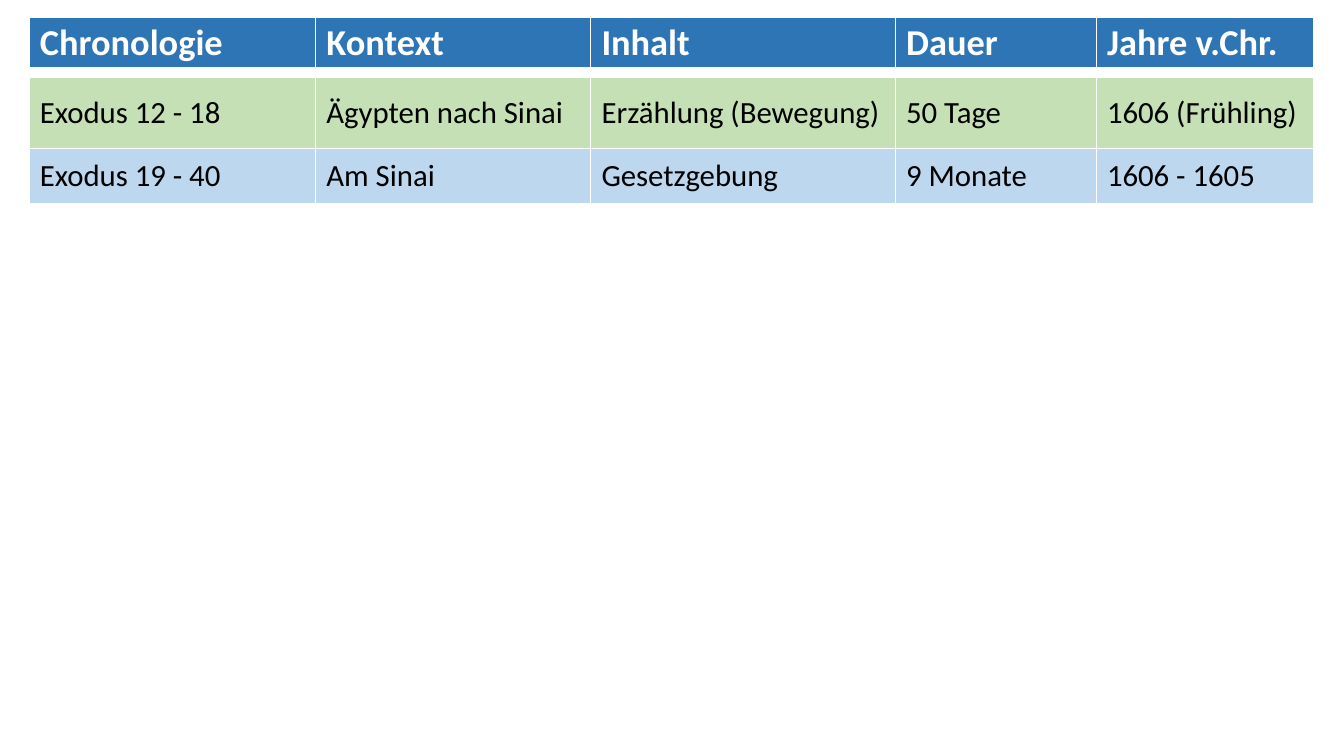
"""Build the slide with the chronology table of Exodus."""
from dataclasses import dataclass

from lxml import etree
from pptx import Presentation
from pptx.dml.color import RGBColor
from pptx.enum.text import MSO_ANCHOR, PP_ALIGN
from pptx.oxml.ns import qn
from pptx.slide import Slide
from pptx.table import _Cell
from pptx.util import Pt

MIDDLE = MSO_ANCHOR.MIDDLE
LEFT, JUSTIFY = PP_ALIGN.LEFT, PP_ALIGN.JUSTIFY

WHITE = RGBColor(0xFF, 0xFF, 0xFF)
BLACK = RGBColor(0x00, 0x00, 0x00)
BLUE = RGBColor(0x2E, 0x75, 0xB6)
GREEN = RGBColor(0xC5, 0xE0, 0xB4)
PALE_BLUE = RGBColor(0xBD, 0xD7, 0xEE)

FONT = "Calibri"
TABLE_LEFT, TABLE_TOP = 20.8, 12.4
COLUMN_WIDTHS = (204.7, 196.5, 217.6, 143.5, 155.3)
SIDE_MARGIN = 7.7


@dataclass(frozen=True)
class TableRow:
    """One table row with its look."""

    height: float
    fill: RGBColor
    texts: tuple[str, ...] = ("",) * len(COLUMN_WIDTHS)
    size: int = 22
    color: RGBColor = BLACK
    bold: bool = False
    align: PP_ALIGN = LEFT
    top_line: float = 1
    bottom_line: float = 1


ROWS = (
    TableRow(36.7, BLUE, ("Chronologie", "Kontext", "Inhalt", "Dauer", "Jahre v.Chr."),
             size=26, color=WHITE, bold=True, align=JUSTIFY, bottom_line=3),
    TableRow(6.4, WHITE, size=2, top_line=3),
    TableRow(50.4, GREEN, ("Exodus 12 - 18", "Ägypten nach Sinai", "Erzählung (Bewegung)",
                           "50 Tage", "1606 (Frühling)")),
    TableRow(39.6, PALE_BLUE, ("Exodus 19 - 40", "Am Sinai", "Gesetzgebung",
                               "9 Monate", "1606 - 1605")),
)


def add_borders(cell: _Cell, row: TableRow) -> None:
    """Draw white lines on the four sides of a cell."""
    properties = cell._tc.get_or_add_tcPr()
    widths = {"a:lnL": 1, "a:lnR": 1, "a:lnT": row.top_line, "a:lnB": row.bottom_line}
    for tag, width in widths.items():
        line = etree.SubElement(properties, qn(tag), w=str(Pt(width)))
        fill = etree.SubElement(line, qn("a:solidFill"))
        etree.SubElement(fill, qn("a:srgbClr"), val=str(WHITE))


def fill_cell(cell: _Cell, text: str, row: TableRow) -> None:
    """Format a cell and write its text."""
    add_borders(cell, row)
    cell.fill.solid()
    cell.fill.fore_color.rgb = row.fill
    layout = {"margin_left": Pt(SIDE_MARGIN), "margin_right": Pt(SIDE_MARGIN),
              "margin_top": 0, "margin_bottom": 0, "vertical_anchor": MIDDLE}
    for name, value in layout.items():
        setattr(cell, name, value)
    para = cell.text_frame.paragraphs[0]
    para.alignment = row.align
    if not text:
        etree.SubElement(para._p, qn("a:endParaRPr"), sz=str(row.size * 100))
        return
    span = para.add_run()
    span.text = text
    for name, value in {"name": FONT, "size": Pt(row.size), "bold": row.bold}.items():
        setattr(span.font, name, value)
    span.font.color.rgb = row.color


def add_chronology(page: Slide) -> None:
    """Add the chronology table to the page."""
    frame = page.shapes.add_table(
        len(ROWS), len(COLUMN_WIDTHS), Pt(TABLE_LEFT), Pt(TABLE_TOP),
        Pt(sum(COLUMN_WIDTHS)), Pt(sum(row.height for row in ROWS)))
    table = frame.table
    table.horz_banding = False
    for column, width in zip(table.columns, COLUMN_WIDTHS):
        column.width = Pt(width)
    for table_row, row in zip(table.rows, ROWS):
        table_row.height = Pt(row.height)
        for cell, text in zip(table_row.cells, row.texts):
            fill_cell(cell, text, row)


def main() -> None:
    """Create the deck and save it."""
    deck = Presentation()
    deck.slide_width, deck.slide_height = Pt(960), Pt(540)
    page = deck.slides.add_slide(deck.slide_layouts[6])
    add_chronology(page)
    deck.save("out.pptx")


if __name__ == "__main__":
    main()
